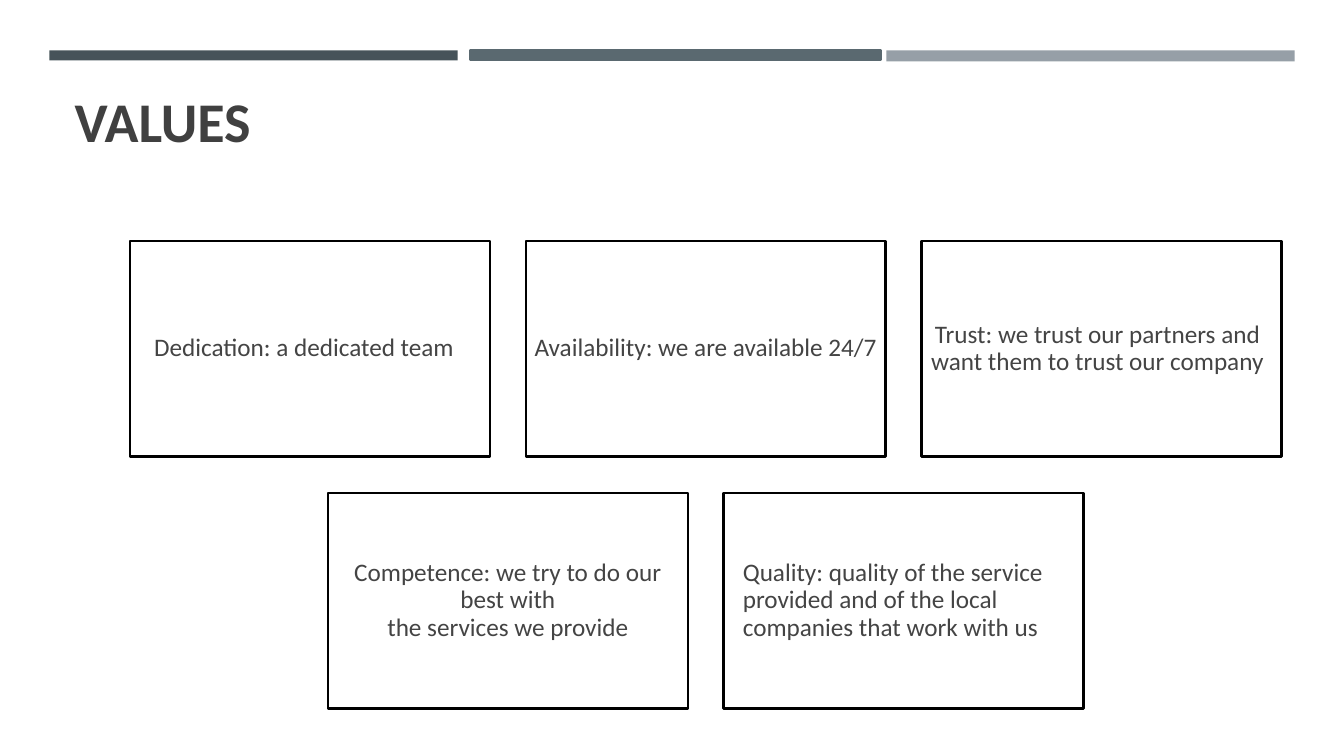
import pptx
import pptx.util
import pptx.dml.color
import pptx.enum.shapes
import pptx.enum.text

Inches = pptx.util.Inches
Pt = pptx.util.Pt
RGB = pptx.dml.color.RGBColor.from_string
ALIGN = pptx.enum.text.PP_ALIGN
ANCHOR = pptx.enum.text.MSO_ANCHOR
RECTANGLE = pptx.enum.shapes.MSO_SHAPE.RECTANGLE

THEME = {
    "font": "Calibri",
    "title_size": 40,
    "value_size": 18,
    "title": RGB("404040"),
    "value": RGB("444444"),
    "card": RGB("FFFFFF"),
    "border": RGB("000000"),
    "bars": [RGB("465359"), RGB("5A6970"), RGB("969FA7")],
    "line_width": 1.75,
}


def write(text, *, frame, size, color, bold=False, align=ALIGN.CENTER,
          anchor=ANCHOR.MIDDLE, margins=(0.07, 0.07, 0.07, 0.07)):
    frame.word_wrap = True
    frame.auto_size = pptx.enum.text.MSO_AUTO_SIZE.NONE
    frame.vertical_anchor = anchor
    (frame.margin_left, frame.margin_top,
     frame.margin_right, frame.margin_bottom) = map(Inches, margins)
    frame.text = text
    paragraph = frame.paragraphs[0]
    paragraph.alignment = align
    paragraph.line_spacing = 0.9
    for run in paragraph.runs:
        run.font.name = THEME["font"]
        run.font.size = Pt(size)
        run.font.bold = bold
        run.font.color.rgb = color


def rectangle(left, top, width, height, fill, line=None):
    box = slide.shapes.add_shape(
        RECTANGLE, Inches(left), Inches(top), Inches(width), Inches(height))
    box.shadow.inherit = False
    box.fill.solid()
    box.fill.fore_color.rgb = fill
    if line is None:
        box.line.fill.background()
    else:
        box.line.color.rgb = line
        box.line.width = Pt(THEME["line_width"])
    return box


deck = pptx.Presentation()
deck.slide_width = Inches(13.33)
deck.slide_height = Inches(7.5)
slide = deck.slides.add_slide(deck.slide_layouts[5])

dark, middle, light = THEME["bars"]
rectangle(0.49, 0.5, 4.05, 0.1, dark)
rectangle(8.79, 0.5, 4.05, 0.11, light)
rectangle(4.66, 0.5, 4.08, 0.09, middle, line=middle)

heading = slide.shapes.title
heading.left, heading.top = Inches(0.64), Inches(0.76)
heading.width, heading.height = Inches(12.06), Inches(0.82)
write("VALUES", frame=heading.text_frame, size=THEME["title_size"],
      color=THEME["title"], bold=True, align=ALIGN.LEFT,
      anchor=ANCHOR.BOTTOM, margins=(0.1, 0.05, 0.1, 0.05))

value_rows = [
    [
        ("Dedication: a dedicated team", {"margins": (0.07, 0.07, 0.19, 0.07)}),
        ("Availability: we are available 24/7", {}),
        ("Trust: we trust our partners and want them to trust our company",
         {"margins": (0.07, 0.07, 0.15, 0.07)}),
    ],
    [
        ("Competence: we try to do our best with\vthe services we provide", {}),
        ("Quality: quality of the service\vprovided and of the local\v"
         "companies that work with us",
         {"align": ALIGN.LEFT, "margins": (0.19, 0.07, 0.07, 0.07)}),
    ],
]
card_width, card_height = 3.57, 2.14
column_gap, row_gap = 0.355, 0.36
column_step = card_width + column_gap
grid_left, grid_top = 1.29, 2.39
longest_row = max(map(len, value_rows))

for row, values in enumerate(value_rows):
    row_left = grid_left + (longest_row - len(values)) * column_step / 2
    row_top = grid_top + row * (card_height + row_gap)
    for column, (value, layout) in enumerate(values):
        card = rectangle(row_left + column * column_step, row_top, card_width,
                         card_height, THEME["card"], line=THEME["border"])
        write(value, frame=card.text_frame, size=THEME["value_size"],
              color=THEME["value"], **layout)

deck.save("out.pptx")
